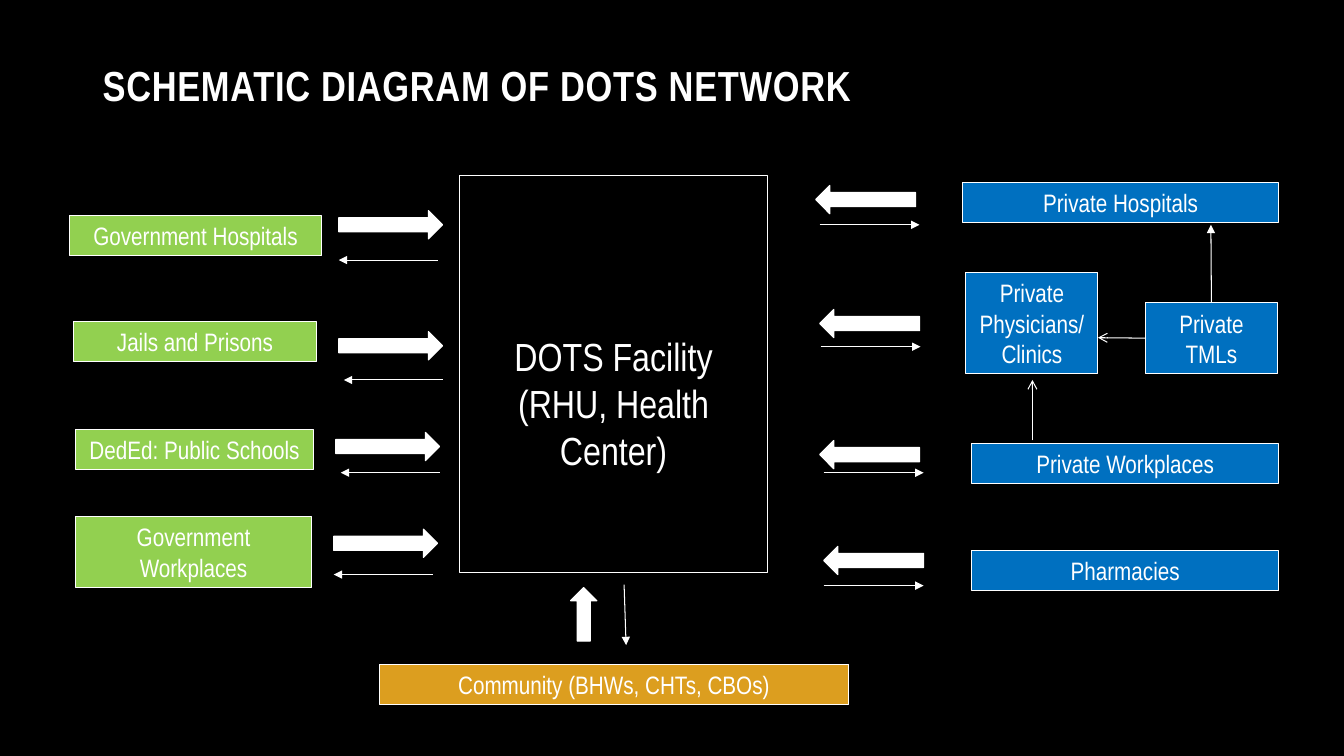
from lxml import etree
from pptx import Presentation
from pptx.dml.color import RGBColor
from pptx.enum.shapes import MSO_CONNECTOR, MSO_SHAPE
from pptx.enum.text import MSO_ANCHOR, PP_ALIGN
from pptx.oxml.ns import qn
from pptx.util import Inches, Pt

FONT = "Arial Narrow"
BLACK = RGBColor(0x00, 0x00, 0x00)
WHITE = RGBColor(0xFF, 0xFF, 0xFF)
GREEN = RGBColor(0x92, 0xD0, 0x50)
BLUE = RGBColor(0x00, 0x70, 0xC0)
GOLD = RGBColor(0xDC, 0x9E, 0x1F)
RECT = MSO_SHAPE.RECTANGLE
RIGHT, LEFT, UP = MSO_SHAPE.RIGHT_ARROW, MSO_SHAPE.LEFT_ARROW, MSO_SHAPE.UP_ARROW
STRAIGHT = MSO_CONNECTOR.STRAIGHT
CENTER = PP_ALIGN.CENTER
MIDDLE, BOTTOM = MSO_ANCHOR.MIDDLE, MSO_ANCHOR.BOTTOM
TOP_SIDE, LEFT_SIDE = 0, 1

TITLE = "SCHEMATIC DIAGRAM OF DOTS NETWORK"
FACILITY = ["DOTS Facility", "(RHU, Health Center)"]
FACILITY_BOX = (4.56, 1.74, 3.05, 3.94)
# text, fill, (left, top, width, height)
PARTNERS = [
    ("Private Hospitals", BLUE, (9.55, 1.81, 3.13, 0.4)),
    ("Private TMLs", BLUE, (11.36, 3, 1.31, 0.71)),
    ("Private Physicians/ Clinics", BLUE, (9.58, 2.7, 1.31, 1.01)),
    ("Pharmacies", BLUE, (9.64, 5.46, 3.04, 0.4)),
    ("Private Workplaces", BLUE, (9.64, 4.4, 3.04, 0.4)),
    ("Community (BHWs, CHTs, CBOs)", GOLD, (3.76, 6.59, 4.66, 0.4)),
    ("Government Hospitals", GREEN, (0.69, 2.14, 2.5, 0.4)),
    ("Jails and Prisons", GREEN, (0.73, 3.19, 2.41, 0.4)),
    ("DedEd: Public Schools", GREEN, (0.75, 4.26, 2.36, 0.4)),
    ("Government Workplaces", GREEN, (0.75, 5.12, 2.34, 0.71)),
]
# thick arrow left and middle height, then thin return line left and height
GOVERNMENT_FLOWS = [
    (3.36, 2.23, 3.36, 2.58),
    (3.36, 3.43, 3.41, 3.77),
    (3.33, 4.43, 3.38, 4.69),
    (3.31, 5.39, 3.31, 5.7),
]
PRIVATE_FLOWS = [
    (8.09, 1.98, 8.13, 2.23),
    (8.13, 3.21, 8.14, 3.44),
    (8.13, 4.51, 8.17, 4.69),
    (8.17, 5.56, 8.17, 5.81),
]
GOVERNMENT_LENGTHS = (1.03, 0.98)  # thick, thin
PRIVATE_LENGTHS = (0.99, 0.99)
THICK_HEIGHT = 0.28

prs = Presentation()
prs.slide_width, prs.slide_height = Inches(13.33), Inches(7.5)
slide = prs.slides.add_slide(prs.slide_layouts[6])
slide.background.fill.solid()
slide.background.fill.fore_color.rgb = BLACK


def add_block(kind, box, fill=None, line_width=0.75):
    sp = slide.shapes.add_shape(kind, *map(Inches, box))
    sp.shadow.inherit = False
    if fill is None:
        sp.fill.background()
    else:
        sp.fill.solid()
        sp.fill.fore_color.rgb = fill
    sp.line.color.rgb = WHITE
    sp.line.width = Pt(line_width)
    return sp


def write(sp, lines, size, anchor=MIDDLE, align=CENTER, bold=False):
    tf = sp.text_frame
    tf.word_wrap = True
    tf.vertical_anchor = anchor
    tf.text = "\n".join(lines)
    for p in tf.paragraphs:
        p.alignment = align
        p.font.name, p.font.size, p.font.bold = FONT, Pt(size), bold
        p.font.color.rgb = WHITE
    return tf


def add_thin_arrow(x1, y1, x2, y2, head="triangle"):
    line = slide.shapes.add_connector(STRAIGHT, *map(Inches, (x1, y1, x2, y2)))
    line.line.color.rgb = WHITE
    line.line.width = Pt(0.75)
    etree.SubElement(line.line._get_or_add_ln(), qn("a:tailEnd"), type=head)
    etree.SubElement(line._element.spPr, qn("a:effectLst"))
    return line


def add_flows(flows, kind, lengths):
    """Draw a thick arrow to the facility and a thin one back for each row."""
    thick, thin = lengths
    for left, middle, thin_left, y in flows:
        add_block(kind, (left, middle - THICK_HEIGHT / 2, thick, THICK_HEIGHT),
                  WHITE, 0.85)
        ends = [thin_left, thin_left + thin]
        if kind == RIGHT:
            ends.reverse()
        add_thin_arrow(ends[0], y, ends[1], y)


title = slide.shapes.add_textbox(*map(Inches, (0.92, 0.22, 11.56, 0.92)))
tf = write(title, [TITLE], 30, BOTTOM, PP_ALIGN.LEFT, True)
tf.paragraphs[0].runs[0].font._element.set("spc", "50")

tf = write(add_block(RECT, FACILITY_BOX), FACILITY, 28)
tf.margin_top = Inches(0.63)

blocks = {}
for text, fill, box in PARTNERS:
    blocks[text] = add_block(RECT, box, fill)
    write(blocks[text], [text], 18)

add_flows(GOVERNMENT_FLOWS, RIGHT, GOVERNMENT_LENGTHS)
add_flows(PRIVATE_FLOWS, LEFT, PRIVATE_LENGTHS)

add_block(UP, (5.66, 5.83, 0.26, 0.53), WHITE, 0.85)
add_thin_arrow(6.19, 5.8, 6.21, 6.4)

tmls = blocks["Private TMLs"]
add_thin_arrow(12.01, 3, 12.01, 2.23).begin_connect(tmls, TOP_SIDE)
add_thin_arrow(11.36, 3.35, 10.89, 3.35, "arrow").begin_connect(tmls, LEFT_SIDE)
add_thin_arrow(10.24, 4.37, 10.24, 3.77, "arrow")

prs.save("out.pptx")
